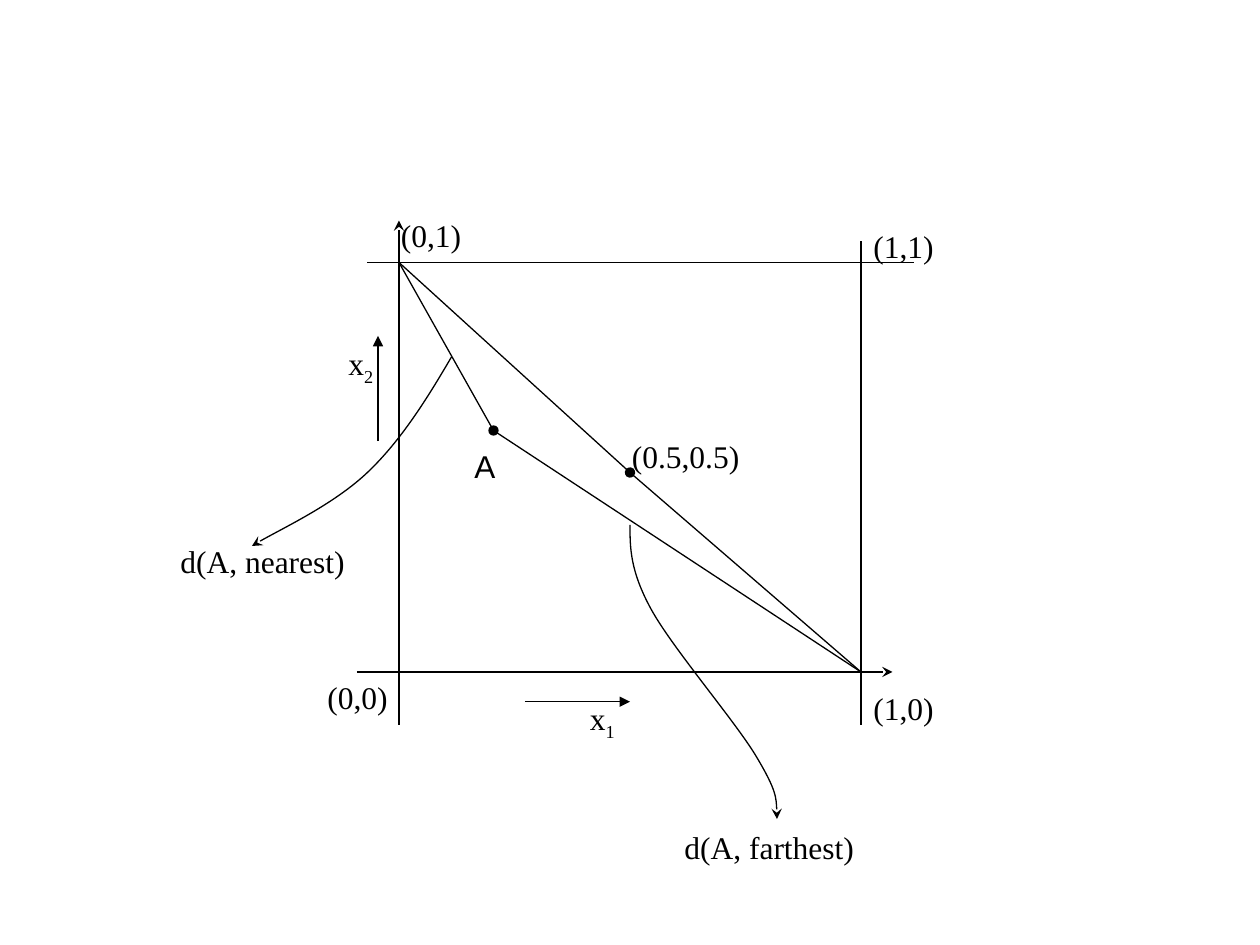
from pptx import Presentation
from pptx import util as u
from pptx.dml.color import RGBColor
from pptx.enum import shapes, text
from pptx.oxml import ns, xmlchemy as xc

Pt = u.Pt
theme = {"ink": RGBColor(0, 0, 0), "line": 0.75, "size": 18,
         "serif": "Times New Roman", "sans": "Arial"}

left, right, top, base = 228, 492, 150, 384
near, far = (left, top), (right, base)
mid, spot = (360, 270), (282, 246)

lines = [
    ((left, 414), (left, 126), "stealth"),
    ((204, base), (510, base), "stealth"),
    ((210, top), (522, top), None),
    ((right, 138), (right, 414), None),
    ((300, 401), (360, 401), "triangle"),
    ((216, 252), (216, 192), "triangle"),
    (near, mid, "oval"),
    (near, spot, "oval"),
    (spot, far, None),
    (mid, far, None),
]
curves = [
    [(258, 204), (243.6, 228), (229, 252), (210, 270),
     (191, 288), (155, 305), (144, 312)],
    [(360, 300), (360, 313), (360, 326), (372, 348), (384, 370),
     (420, 412), (432, 432), (444, 452), (444, 460), (444, 468)],
]
labels = [
    ("(1,0)", "", 492, 390, 60),
    ("(0,0)", "", 180, 384, 60),
    ("(0,1)", "", 222, 120, 60),
    ("(1,1)", "", 492, 126, 60),
    ("x", "1", 330, 396, 60),
    ("x", "2", 192, 193, 36),
    ("d(A, nearest)", "", 96, 306, 132),
    ("d(A, farthest)", "", 384, 469.5, 132),
    ("(0.5,0.5)", "", 354, 246, 78),
    ("A", "", 264, 252, 26.6),
]


def ink(item, tip):
    item.line.color.rgb = theme["ink"]
    item.line.width = Pt(theme["line"])
    if tip:
        end = xc.OxmlElement("a:tailEnd")
        end.set("type", tip)
        item.line._get_or_add_ln().append(end)


def draw_line(slide, start, stop, tip):
    item = slide.shapes.add_connector(
        shapes.MSO_CONNECTOR.STRAIGHT, *map(Pt, start + stop))
    ink(item, tip)
    item._element.spPr.append(xc.OxmlElement("a:effectLst"))


def draw_curve(slide, points):
    pen = slide.shapes.build_freeform(*points[0], scale=Pt(1))
    pen.add_line_segments(points[1:], close=False)
    item = pen.convert_to_shape()
    item.fill.background()
    ink(item, "stealth")
    item.shadow.inherit = False
    steps = list(item._element.iter(ns.qn("a:lnTo")))
    for i in range(0, len(steps), 3):
        bend = xc.OxmlElement("a:cubicBezTo")
        steps[i].addprevious(bend)
        for step in steps[i:i + 3]:
            bend.append(step[0])
            step.getparent().remove(step)


def add_label(slide, word, sub, x, y, wide):
    box = slide.shapes.add_textbox(Pt(x), Pt(y), Pt(wide), Pt(28.8))
    frame = box.text_frame
    frame.word_wrap = word != "A"
    frame.auto_size = text.MSO_AUTO_SIZE.SHAPE_TO_FIT_TEXT
    for part, shift in ((word, None), (sub, "-25000")):
        if part:
            run = frame.paragraphs[0].add_run()
            run.text = part
            run.font.size = Pt(theme["size"])
            run.font.name = theme["sans" if word == "A" else "serif"]
            run.font.color.rgb = theme["ink"]
            if shift:
                run._r.get_or_add_rPr().set("baseline", shift)


def main():
    deck = Presentation()
    deck.slide_width, deck.slide_height = Pt(720), Pt(540)
    slide = deck.slides.add_slide(deck.slide_layouts[6])
    for line in lines:
        draw_line(slide, *line)
    for curve in curves:
        draw_curve(slide, curve)
    for label in labels:
        add_label(slide, *label)
    deck.save("out.pptx")


if __name__ == "__main__":
    main()
